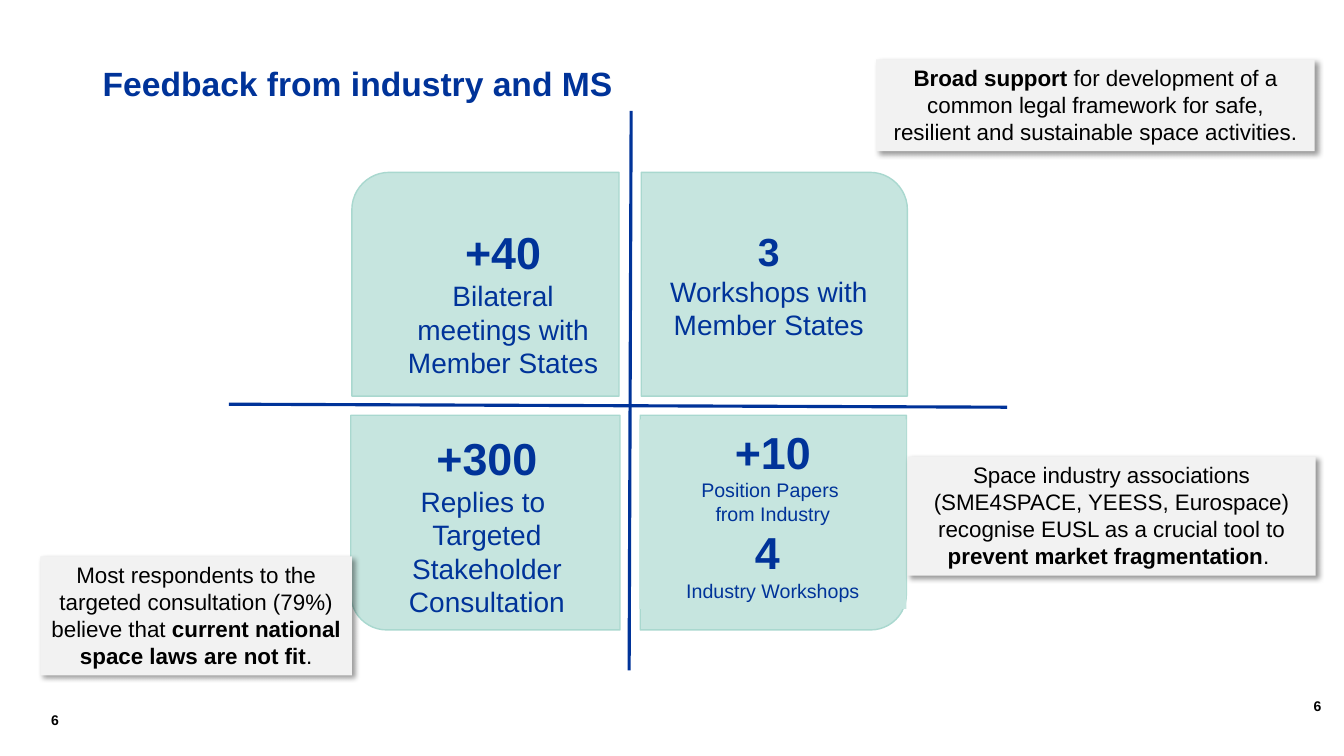
"""Build the slide on feedback from industry and Member States."""
import pptx
import pptx.dml.color
import pptx.enum.shapes
import pptx.enum.text
import pptx.oxml
import pptx.oxml.ns
import pptx.util

Inches, Pt = pptx.util.Inches, pptx.util.Pt
RGBColor = pptx.dml.color.RGBColor
SHAPE = pptx.enum.shapes.MSO_SHAPE
ANCHOR = pptx.enum.text.MSO_ANCHOR
ALIGN = pptx.enum.text.PP_ALIGN
FIT = pptx.enum.text.MSO_AUTO_SIZE

NAVY = RGBColor(0x00, 0x33, 0x99)
BLACK = RGBColor(0x00, 0x00, 0x00)
MINT = RGBColor(0xC6, 0xE5, 0xDF)
MINT_EDGE = RGBColor(0xA9, 0xD8, 0xCF)
GREY = RGBColor(0xF2, 0xF2, 0xF2)

QUADRANTS = [
    ((6.36, 1.71, 2.64, 2.22), ()),
    ((3.49, 1.71, 2.65, 2.22), ("flipH",)),
    ((6.35, 4.12, 2.64, 2.13), ("flipV",)),
    ((3.48, 4.12, 2.67, 2.13), ("flipH", "flipV")),
]
AXES = [(6.26, 1.1, 6.24, 6.65), (2.27, 4.01, 9.99, 4.04)]

WORKSHOPS = [[("3\n", 28, True), ("Workshops with Member States", 20, False)]]
PAPERS_BOX = (6.34, 4.16, 2.65, 1.88)
PAPERS = [
    [("+10\n", 32, True), ("Position Papers \nfrom Industry", 14, False)],
    [("4", 32, True), (" \n", 28, True), ("Industry Workshops", 14, False)],
]
FIGURES = [
    ((3.84, 2.18, 2.3, 1.65),
     [[("+40\n", 32, True), ("Bilateral meetings with Member States", 20, False)]]),
    ((3.5, 4.22, 2.66, 1.99),
     [[("+300", 32, True)],
      [("Replies to \nTargeted Stakeholder Consultation", 20, False)]]),
]
CALLOUTS = [
    ((9, 4.53, 4.05, 1.18),
     [("Space industry associations (SME4SPACE, YEESS, Eurospace) recognise EUSL "
       "as a crucial tool to ", 16, False),
      ("prevent market fragmentation", 16, True), (". ", 16, False)]),
    ((0.4, 5.52, 3.09, 1.18),
     [("Most respondents to the targeted consultation (79%) believe that ", 16, False),
      ("current national space laws are not fit", 16, True), (".", 16, False)]),
    ((8.69, 0.59, 4.35, 0.91),
     [("Broad support", 16, True),
      (" for development of a common legal framework for safe, resilient and "
       "sustainable space activities.", 16, False)]),
]
TITLE = ((0.92, 0.4, 11.5, 0.89), [[("Feedback from industry and MS", 24, True)]])
PAGE_NUMBERS = [(0.41, 6.87, 3, 0.4), (12.93, 6.74, 0.41, 0.4)]

SHADOW = (
    f'<a:outerShdw {pptx.oxml.ns.nsdecls("a")} blurRad="50800" dist="38100" '
    'dir="2700000" algn="tl" rotWithShape="0"><a:srgbClr val="000000">'
    '<a:alpha val="40000"/></a:srgbClr></a:outerShdw>'
)


def write(sp, paragraphs, color=NAVY, align=ALIGN.CENTER, **frame):
    tf = sp.text_frame
    for key, value in {"word_wrap": True, "vertical_anchor": ANCHOR.TOP, **frame}.items():
        setattr(tf, key, value)
    for i, runs in enumerate(paragraphs):
        p = tf.add_paragraph() if i else tf.paragraphs[0]
        p.alignment = align
        for text, size, bold in runs:
            for j, part in enumerate(text.split("\n")):
                if j:
                    p.add_line_break()
                if not part:
                    continue
                r = p.add_run()
                r.text = part
                style = {"name": "Arial", "size": Pt(size), "bold": bold}
                for key, value in style.items():
                    setattr(r.font, key, value)
                r.font.color.rgb = color
    return tf


def add_panel(s, kind, box, fill, edge=None):
    sp = s.shapes.add_shape(kind, *map(Inches, box))
    sp.shadow.inherit = False
    sp.fill.solid()
    sp.fill.fore_color.rgb = fill
    if edge:
        sp.line.color.rgb = edge
        sp.line.width = Pt(1)
    else:
        sp.line.fill.background()
    return sp


def add_text(s, box, paragraphs, **options):
    return write(s.shapes.add_textbox(*map(Inches, box)), paragraphs, **options)


def main():
    prs = pptx.Presentation()
    prs.slide_width, prs.slide_height = Inches(13.33), Inches(7.5)
    s = prs.slides.add_slide(prs.slide_layouts[6])

    tf = add_text(s, *TITLE, align=ALIGN.LEFT, vertical_anchor=ANCHOR.MIDDLE)
    tf.paragraphs[0].line_spacing = 0.9

    for ends in AXES:
        axis = s.shapes.add_connector(
            pptx.enum.shapes.MSO_CONNECTOR.STRAIGHT, *map(Inches, ends))
        axis.line.color.rgb = NAVY
        axis.line.width = Pt(2.25)
        axis._element.spPr.append(pptx.oxml.parse_xml(
            f'<a:effectLst {pptx.oxml.ns.nsdecls("a")}/>'))

    for box, flips in QUADRANTS:
        sp = add_panel(s, SHAPE.ROUND_1_RECTANGLE, box, MINT, MINT_EDGE)
        for flip in flips:
            sp._element.spPr.xfrm.set(flip, "1")
        if not flips:
            write(sp, WORKSHOPS, vertical_anchor=ANCHOR.MIDDLE)

    write(add_panel(s, SHAPE.RECTANGLE, PAPERS_BOX, MINT), PAPERS,
          auto_size=FIT.SHAPE_TO_FIT_TEXT)
    for box, paragraphs in FIGURES:
        add_text(s, box, paragraphs, auto_size=FIT.SHAPE_TO_FIT_TEXT)

    for box, runs in CALLOUTS:
        sp = add_panel(s, SHAPE.RECTANGLE, box, GREY)
        effects = sp._element.spPr.find(pptx.oxml.ns.qn("a:effectLst"))
        effects.append(pptx.oxml.parse_xml(SHADOW))
        write(sp, [runs], color=BLACK, auto_size=FIT.SHAPE_TO_FIT_TEXT)

    for box in PAGE_NUMBERS:
        add_text(s, box, [[("6", 10, True)]], color=BLACK, align=ALIGN.LEFT,
                 vertical_anchor=ANCHOR.BOTTOM)

    prs.save("out.pptx")


if __name__ == "__main__":
    main()
